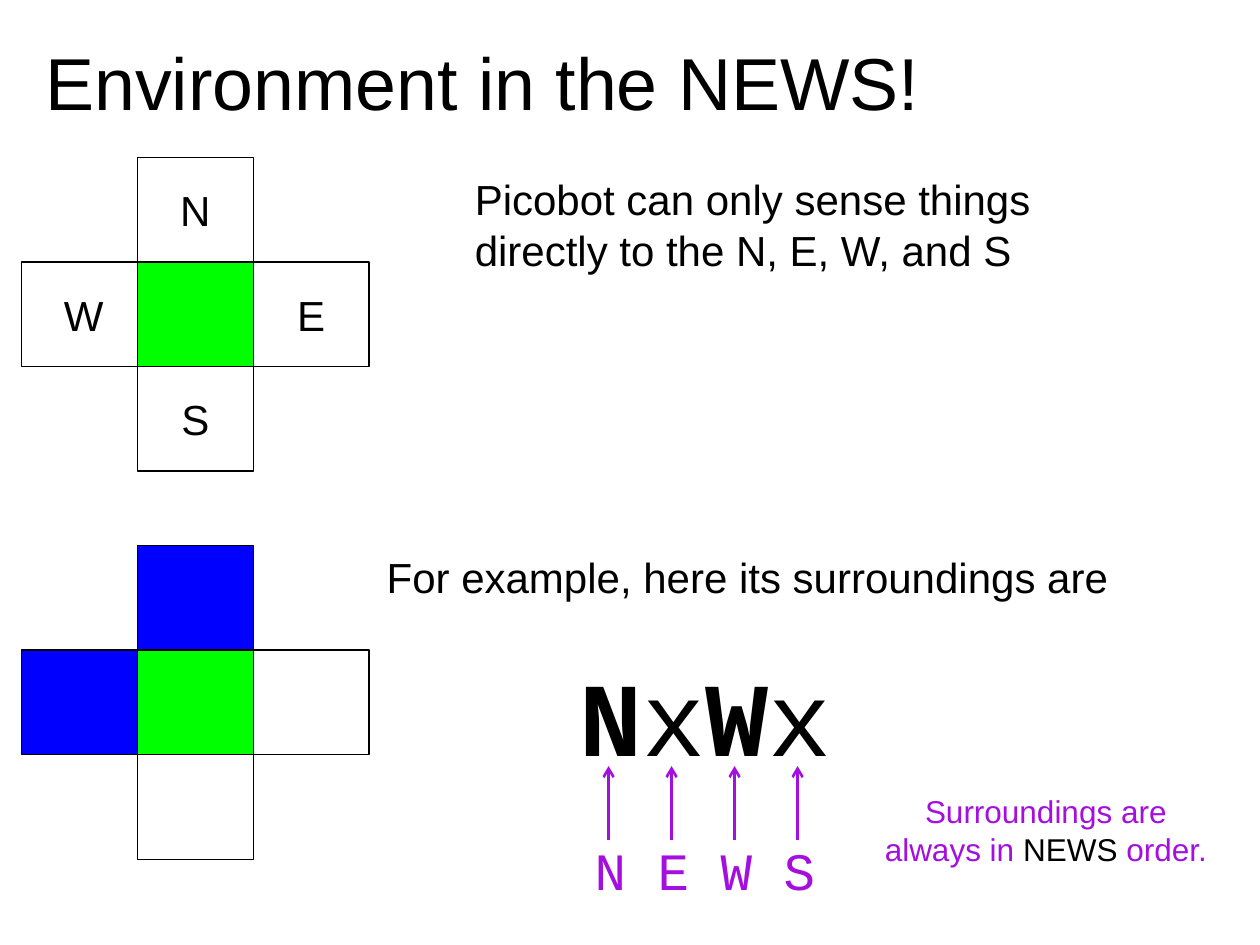
from lxml.etree import SubElement
from pptx import Presentation
from pptx.dml.color import RGBColor
from pptx.enum.shapes import MSO_CONNECTOR, MSO_SHAPE
from pptx.enum.text import MSO_ANCHOR, PP_ALIGN
from pptx.oxml.ns import qn
from pptx.util import Inches, Pt

BLACK = RGBColor(0x00, 0x00, 0x00)
GREEN = RGBColor(0x00, 0xFF, 0x00)
BLUE = RGBColor(0x00, 0x00, 0xFF)
PURPLE = RGBColor(0xA4, 0x0F, 0xE0)

CELL_WIDTH, CELL_HEIGHT = 0.92, 0.83
# Column and row of each cell in the cross
CELLS = {"N": (1, 0), "E": (2, 1), "W": (0, 1), "S": (1, 2), "center": (1, 1)}


def write_text(box, spans, font="Arial", size=24, color=BLACK,
               align=PP_ALIGN.LEFT, wrap=True):
    """Fill a shape with one paragraph; each span is (text, format overrides)."""
    frame = box.text_frame
    frame.word_wrap = wrap
    frame.vertical_anchor = MSO_ANCHOR.TOP
    para = frame.paragraphs[0]
    para.alignment = align
    for text, overrides in spans:
        span = para.add_run()
        span.text = text
        span.font.name = font
        span.font.size = Pt(size)
        span.font.bold = overrides.get("bold", False)
        span.font.color.rgb = overrides.get("color", color)


def add_text(page, left, top, width, height, spans, **text_format):
    box = page.shapes.add_textbox(
        Inches(left), Inches(top), Inches(width), Inches(height))
    write_text(box, spans, **text_format)


def add_title(page, left, top, width, height, text):
    title = page.shapes.title
    title.left, title.top = Inches(left), Inches(top)
    title.width, title.height = Inches(width), Inches(height)
    write_text(title, [(text, {})], size=42)


def add_cross(page, left, top, fills, labels=""):
    """Draw a center cell and its four neighbours, with fills and labels by name."""
    for name, (column, row) in CELLS.items():
        x = left + column * CELL_WIDTH
        y = top + row * CELL_HEIGHT
        cell = page.shapes.add_shape(
            MSO_SHAPE.RECTANGLE, Inches(x), Inches(y),
            Inches(CELL_WIDTH), Inches(CELL_HEIGHT))
        cell.shadow.inherit = False
        cell.line.color.rgb = BLACK
        cell.line.width = Pt(0.75)
        if name in fills:
            cell.fill.solid()
            cell.fill.fore_color.rgb = fills[name]
        else:
            cell.fill.background()
        if name in labels:
            width, height = 0.44, 0.5
            add_text(page, x + (CELL_WIDTH - width) / 2,
                     y + (CELL_HEIGHT - height) / 2, width, height,
                     [(name, {})], align=PP_ALIGN.CENTER, wrap=False)


def add_up_arrow(page, x, bottom, top):
    arrow = page.shapes.add_connector(
        MSO_CONNECTOR.STRAIGHT, Inches(x), Inches(bottom), Inches(x), Inches(top))
    arrow.line.color.rgb = PURPLE
    arrow.line.width = Pt(1.5)
    SubElement(arrow.line._get_or_add_ln(), qn("a:tailEnd"), type="arrow")
    SubElement(arrow._element.spPr, qn("a:effectLst"))


def add_code(page, left, top, width):
    """Show the surroundings code with an arrow from each direction letter."""
    bold = {"bold": True}
    code_format = {"font": "Courier New", "align": PP_ALIGN.CENTER}
    add_text(page, left, top, width, 1.1,
             [("N", bold), ("x", {}), ("W", bold), ("x", {})],
             size=60, **code_format)
    for index in range(4):
        add_up_arrow(page, left + 0.36 + index * 0.5, top + 1.55, top + 0.96)
    add_text(page, left, top + 1.48, width, 0.6, [("N E W S", {})],
             size=30, color=PURPLE, **code_format)


def main():
    deck = Presentation()
    deck.slide_width, deck.slide_height = Inches(10), Inches(7.5)
    page = deck.slides.add_slide(deck.slide_layouts[5])

    add_title(page, 0.26, 0.24, 7.65, 0.81, "Environment in the NEWS!")
    add_cross(page, 0.17, 1.25, {"center": GREEN}, labels="NEWS")
    add_text(page, 3.67, 1.33, 4.67, 0.9,
             [("Picobot can only sense things directly to the N, E, W, and S", {})])
    add_cross(page, 0.17, 4.33, {"center": GREEN, "N": BLUE, "W": BLUE})
    add_text(page, 2.97, 4.33, 6.42, 0.5,
             [("For example, here its surroundings are", {})])
    add_code(page, 4.47, 5.12, 2.25)
    add_text(page, 6.89, 6.24, 2.82, 0.7,
             [("Surroundings are always in ", {}), ("NEWS", {"color": BLACK}),
              (" order.", {})],
             size=18, color=PURPLE, align=PP_ALIGN.CENTER)

    deck.save("out.pptx")


if __name__ == "__main__":
    main()
